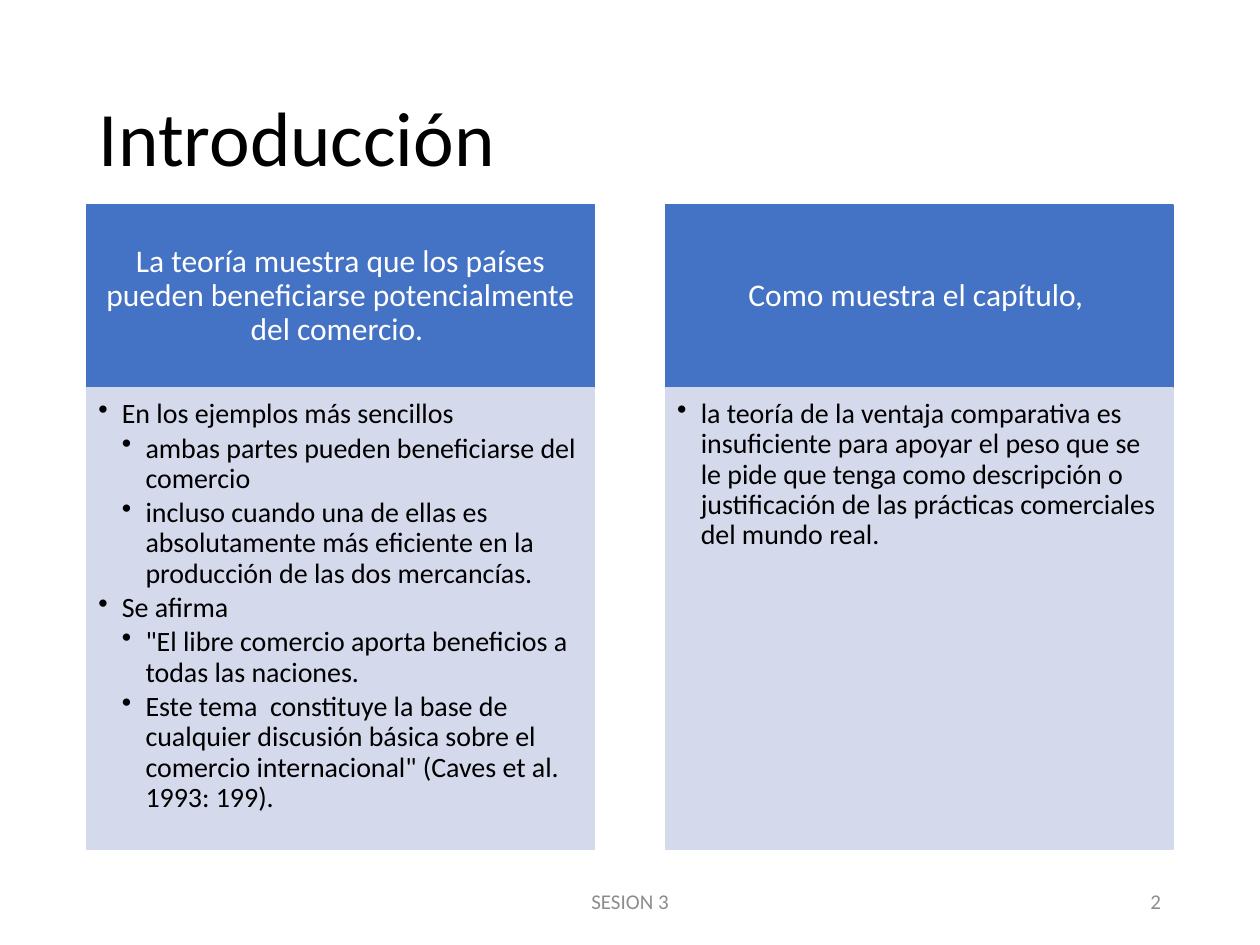
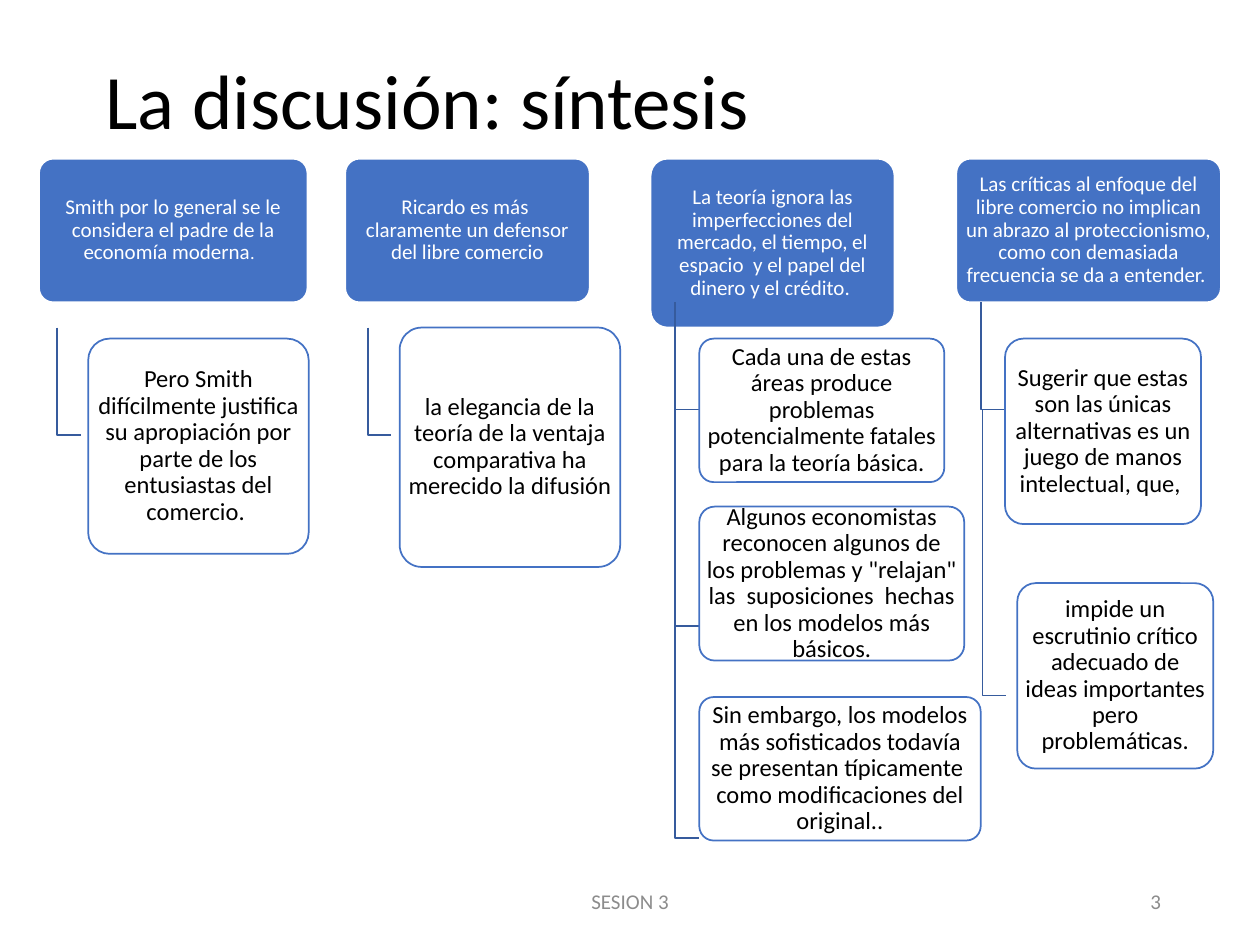
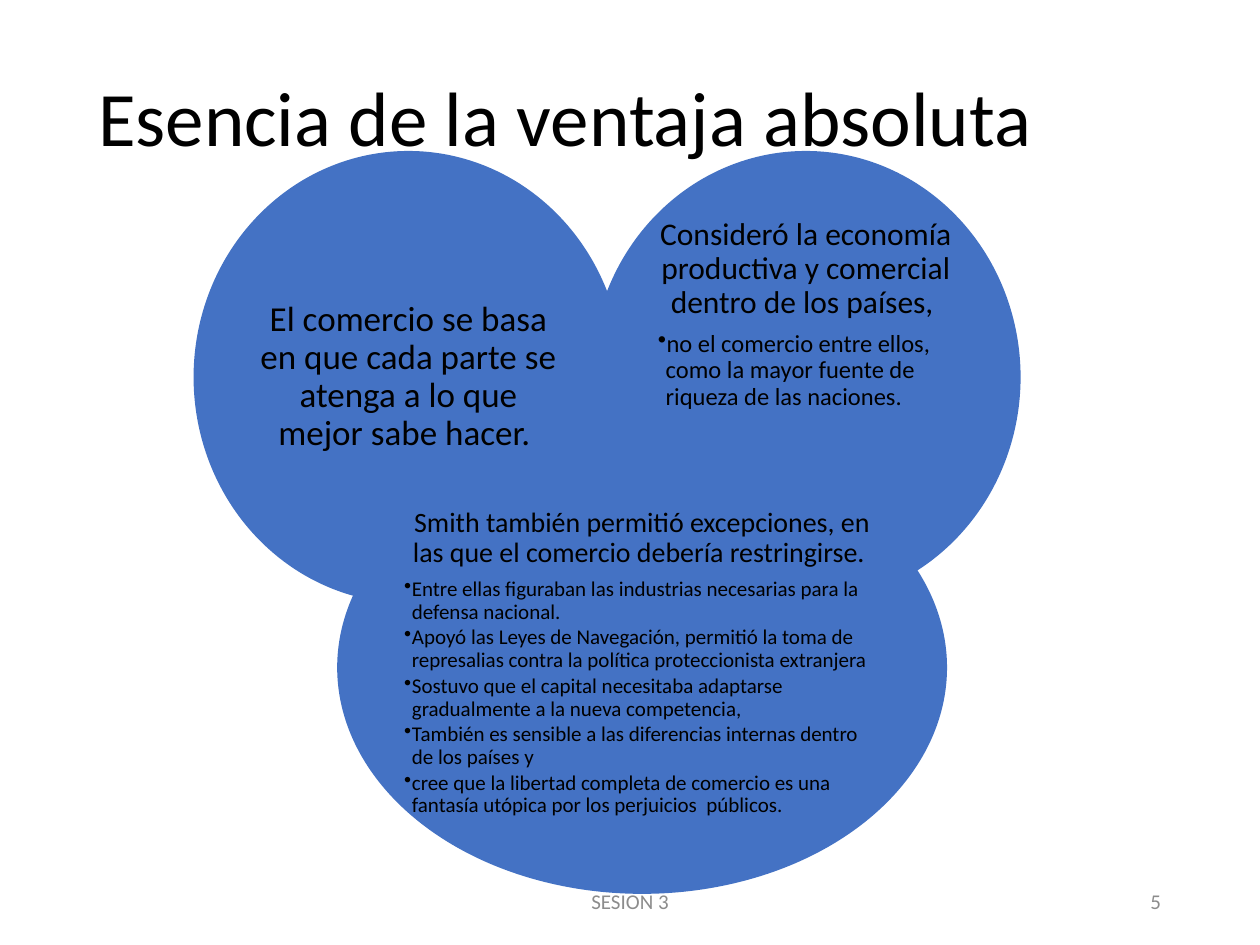
from lxml import etree
from pptx import Presentation
from pptx.dml.color import RGBColor
from pptx.enum.shapes import MSO_SHAPE
from pptx.enum.text import MSO_ANCHOR, PP_ALIGN
from pptx.oxml.ns import qn
from pptx.util import Pt

RECTANGLE, ROUNDED, OVAL = MSO_SHAPE.RECTANGLE, MSO_SHAPE.ROUNDED_RECTANGLE, MSO_SHAPE.OVAL
TOP, MIDDLE = MSO_ANCHOR.TOP, MSO_ANCHOR.MIDDLE
LEFT, CENTER, RIGHT = PP_ALIGN.LEFT, PP_ALIGN.CENTER, PP_ALIGN.RIGHT

FONT = "Calibri"
BLUE, DARK_BLUE, PALE_BLUE = "4472C4", "365B9D", "D4D9EC"
BLACK, WHITE, GRAY = "000000", "FFFFFF", "8C8C8C"
FOOTER_TOP, FOOTER_HEIGHT = 500.4, 28.8
CORNER = 0.1
ELBOW_RUN = 13.5
CIRCLE_PAD = 38.2

PANELS = [
    ("La teoría muestra que los países pueden beneficiarse potencialmente del comercio. ", [
        (1, "En los ejemplos más sencillos"),
        (2, "ambas partes pueden beneficiarse del comercio"),
        (2, "incluso cuando una de ellas es absolutamente más eficiente en la producción "
            "de las dos mercancías."),
        (1, "Se afirma"),
        (2, '"El libre comercio aporta beneficios a todas las naciones.'),
        (2, "Este tema  constituye la base de cualquier discusión básica sobre el comercio "
            'internacional" (Caves et al. 1993: 199).'),
    ]),
    ("Como muestra el capítulo, ", [
        (1, "la teoría de la ventaja comparativa es insuficiente para apoyar el peso que se le "
            "pide que tenga como descripción o justificación de las prácticas comerciales del "
            "mundo real."),
    ]),
]

HEADINGS = [
    ((22.3, 90.7, 153.4, 82.1),
     "Smith por lo general se le considera el padre de la economía moderna"),
    ((197.3, 90.7, 139.7, 82.1), "Ricardo es más  claramente un defensor del libre comercio"),
    ((371.8, 90.7, 139.4, 96.5),
     "La teoría ignora las imperfecciones del mercado, el tiempo, el espacio  y el papel del "
     "dinero y el crédito. "),
    ((546.5, 90.7, 151.2, 82.1),
     "Las críticas al enfoque del libre comercio no implican un abrazo al proteccionismo, como "
     "con demasiada frecuencia se da a entender. "),
]

ELBOWS = [
    (32.8, 187.2, 248.4), (210.2, 187.2, 248.4),
    (385.9, 172.8, 234), (385.9, 193.7, 357.5), (385.9, 212.4, 478.8),
    (560.4, 172.8, 234), (561.4, 234, 397.4),
]

ARGUMENTS = [
    ((50.4, 193.5, 126, 123),
     "Pero Smith difícilmente justifica su apropiación por parte de los entusiastas del "
     "comercio. "),
    ((228.4, 187.2, 126, 136.8),
     "la elegancia de la teoría de la ventaja comparativa ha merecido la difusión"),
    ((399.6, 193.5, 140, 82),
     "Cada una de estas áreas produce problemas potencialmente fatales  para la teoría básica. "),
    ((399.6, 289.5, 151.4, 88),
     'Algunos economistas reconocen algunos de los problemas y "relajan" las  suposiciones  '
     "hechas en los modelos más básicos."),
    ((399.6, 398.3, 160.8, 82),
     "Sin embargo, los modelos más sofisticados todavía se presentan típicamente  como "
     "modificaciones del original.."),
    ((574.3, 193.5, 112, 106),
     "Sugerir que estas son las únicas alternativas es un juego de manos intelectual, que, "),
    ((581.3, 333.2, 112, 106),
     "impide un escrutinio crítico adecuado de ideas importantes pero problemáticas."),
]

CIRCLES = [
    ((110.6, 86.3, 245.5, 258.5), MIDDLE, 20,
     "El comercio se basa en que cada parte se atenga a lo que mejor sabe hacer. ", 0, []),
    ((337.7, 86.3, 245.5, 258.5), TOP, 18,
     "Consideró la economía productiva y comercial dentro de los países, ", 14,
     ["no el comercio entre ellos,  como la mayor fuente de riqueza de las naciones."]),
    ((192.7, 252.1, 348.5, 258.7), TOP, 16,
     "Smith también permitió excepciones, en las que el comercio debería restringirse. ", 12,
     ["Entre ellas figuraban las industrias necesarias para la defensa nacional.",
      "Apoyó las Leyes de Navegación, permitió la toma de represalias contra la política "
      "proteccionista extranjera",
      "Sostuvo que el capital necesitaba adaptarse gradualmente a la nueva competencia,",
      "También es sensible a las diferencias internas dentro de los países y",
      "cree que la libertad completa de comercio es una fantasía utópica por los perjuicios  "
      "públicos."]),
]


def color(hex_code):
    """Turn a hex string into a colour."""
    return RGBColor.from_string(hex_code)


def prepare_frame(holder, anchor, insets):
    """Set wrapping, anchor and left, top, right, bottom insets; return the frame."""
    frame = holder.text_frame
    frame.word_wrap = True
    frame.vertical_anchor = anchor
    frame.margin_left, frame.margin_top, frame.margin_right, frame.margin_bottom = map(Pt, insets)
    return frame


def write(frame, text, size, ink=BLACK, align=CENTER, spacing=0.9, after=0.35, indent=0, hang=0):
    """Write one paragraph, with a hanging bullet when hang is given."""
    paragraph = frame.paragraphs[0]
    if paragraph.runs:
        paragraph = frame.add_paragraph()
    paragraph.add_run().text = text
    paragraph.alignment = align
    paragraph.line_spacing = spacing
    paragraph.space_after = Pt(size * after)
    if hang:
        properties = paragraph._p.get_or_add_pPr()
        properties.set("marL", str(Pt(indent)))
        properties.set("indent", str(-Pt(hang)))
        etree.SubElement(properties, qn("a:buChar")).set("char", "•")
    font = paragraph.font
    font.name, font.size, font.color.rgb = FONT, Pt(size), color(ink)
    return paragraph


def add_label(slide, box, text, size, ink=BLACK, align=LEFT, spacing=0.9):
    """Add one free-standing line of text."""
    label = slide.shapes.add_textbox(*map(Pt, box))
    frame = prepare_frame(label, MIDDLE, (7.2, 3.6, 7.2, 3.6))
    write(frame, text, size, ink, align, spacing, after=0)


def add_block(slide, kind, box, fill, outline=None):
    """Add a filled shape with an optional outline."""
    block = slide.shapes.add_shape(kind, *map(Pt, box))
    block.shadow.inherit = False
    block.fill.solid()
    block.fill.fore_color.rgb = color(fill)
    if outline:
        block.line.color.rgb = color(outline)
        block.line.width = Pt(1)
    else:
        block.line.fill.background()
    return block


def add_card(slide, box, text, size, ink, fill, outline):
    """Add a rounded card and return its paragraph."""
    card = add_block(slide, ROUNDED, box, fill, outline)
    card.adjustments[0] = CORNER
    corner_inset = 0.29 * CORNER * min(box[2:])
    side, edge = max(0, 3.6 - corner_inset), max(0, 2.9 - corner_inset)
    return write(prepare_frame(card, MIDDLE, (side, edge, side, edge)), text, size, ink)


def add_elbow(slide, x, top, bottom):
    """Draw a bracket line down and then right."""
    builder = slide.shapes.build_freeform(Pt(x), Pt(top))
    builder.add_line_segments(
        [(Pt(x), Pt(bottom)), (Pt(x + ELBOW_RUN), Pt(bottom))], close=False)
    elbow = builder.convert_to_shape()
    elbow.shadow.inherit = False
    elbow.fill.background()
    elbow.line.color.rgb = color(DARK_BLUE)
    elbow.line.width = Pt(1)


def add_panel(slide, left, heading, points):
    """Add a heading band over a body of bulleted points."""
    band = add_block(slide, RECTANGLE, (left, 117.2, 290.2, 104.4), BLUE, BLUE)
    write(prepare_frame(band, MIDDLE, (10.1, 5.8, 10.1, 5.8)), heading, 18, WHITE)
    body = add_block(slide, RECTANGLE, (left, 221.6, 290.2, 263.5), PALE_BLUE, PALE_BLUE)
    frame = prepare_frame(body, TOP, (6.7, 6.7, 9, 10))
    for level, point in points:
        write(frame, point, 16, align=LEFT, after=0.15, indent=13.5 * level, hang=13.5)


def add_circle_text(slide, box, anchor, size, lead, point_size, points):
    """Write a centred lead and its bullets inside a circle."""
    holder = slide.shapes.add_textbox(*map(Pt, box))
    frame = prepare_frame(holder, anchor, [CIRCLE_PAD] * 4)
    write(frame, lead, size)
    for point in points:
        write(frame, point, point_size, align=LEFT, after=0.15, indent=4.5, hang=4.5)


def start_slide(deck, title, title_box, number):
    """Add a blank slide with its title, footer and number."""
    slide = deck.slides.add_slide(deck.slide_layouts[6])
    add_label(slide, title_box, title, 44)
    add_label(slide, (238.5, FOOTER_TOP, 243, FOOTER_HEIGHT), "SESION 3", 12, GRAY, CENTER, 1.0)
    add_label(slide, (508.5, FOOTER_TOP, 162, FOOTER_HEIGHT), str(number), 12, GRAY, RIGHT, 1.0)
    return slide


def main():
    """Build the three slides and save them."""
    deck = Presentation()
    deck.slide_width, deck.slide_height = Pt(720), Pt(540)

    introduction = start_slide(deck, "Introducción", (49.5, 28.8, 621, 104.4), 2)
    for column, (heading, points) in enumerate(PANELS):
        add_panel(introduction, 49.5 + 330.8 * column, heading, points)

    synthesis = start_slide(deck, "La discusión: síntesis", (53.3, 28.8, 617.8, 62), 3)
    headings = [add_card(synthesis, box, text, 12, WHITE, BLUE, WHITE) for box, text in HEADINGS]
    ending = headings[0].add_run()
    ending.text = ".  "
    ending.font.size = Pt(10.5)
    for elbow in ELBOWS:
        add_elbow(synthesis, *elbow)
    for box, text in ARGUMENTS:
        add_card(synthesis, box, text, 14, BLACK, WHITE, BLUE)

    advantage = start_slide(deck, "Esencia de la ventaja absoluta", (49, 17.3, 621, 104.4), 5)
    for box, *_ in CIRCLES:
        add_block(advantage, OVAL, box, BLUE)
    for circle in CIRCLES:
        add_circle_text(advantage, *circle)

    deck.save("out.pptx")


if __name__ == "__main__":
    main()
